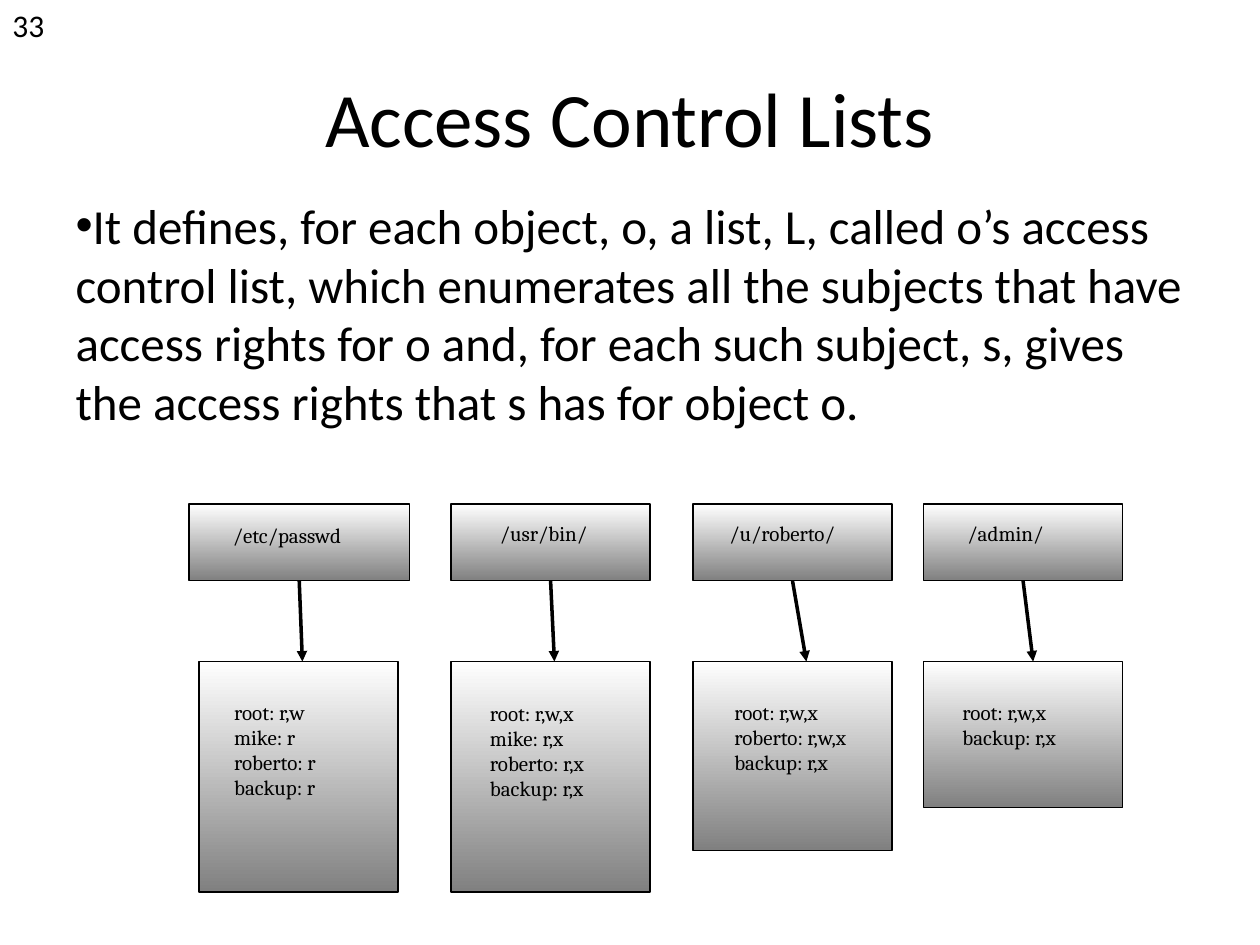
from lxml.etree import SubElement
from pptx import Presentation
from pptx.dml.color import RGBColor
from pptx.enum.shapes import MSO_CONNECTOR as Connector, MSO_SHAPE as Shape
from pptx.enum.text import MSO_ANCHOR as Anchor, PP_ALIGN as Align
from pptx.oxml.ns import qn
from pptx.util import Inches, Pt


def color(value):
    return RGBColor.from_string(value)


def write(frame, text, size, font):
    frame.text = text
    for paragraph in frame.paragraphs:
        for run in paragraph.runs:
            run.font.size = Pt(size)
            run.font.name = font
            run.font.color.rgb = color("000000")


deck = Presentation()
deck.slide_width, deck.slide_height = Inches(10), Inches(7.5)
slide = deck.slides.add_slide(deck.slide_layouts[1])
shapes = slide.shapes

title = shapes.title
title.left, title.top = Inches(0.5), Inches(0.3)
title.width, title.height = Inches(9), Inches(1.25)
write(title.text_frame, "Access Control Lists", 44, "Calibri")
title.text_frame.vertical_anchor = Anchor.MIDDLE
title.text_frame.paragraphs[0].alignment = Align.CENTER

definition = slide.placeholders[1]
definition.left, definition.top = Inches(0.5), Inches(1.5)
definition.width, definition.height = Inches(9), Inches(4.95)
write(
    definition.text_frame,
    "It defines, for each object, o, a list, L, called o’s access control list, "
    "which enumerates all the subjects that have access rights for o and, for each "
    "such subject, s, gives the access rights that s has for object o.",
    28, "Calibri",
)
bullet_format = definition.text_frame.paragraphs[0]._p.get_or_add_pPr()
bullet_format.set("marL", "0")
bullet_format.set("indent", "0")
SubElement(bullet_format, qn("a:buChar")).set("char", "•")

page_number = shapes.add_textbox(Inches(0), Inches(0), Inches(0.6), Inches(0.4))
write(page_number.text_frame, "33", 18, "Calibri")

object_top, object_height, rights_top = 4, 0.61, 5.25
object_bottom = object_top + object_height
rights_width = 1.58

access_lists = [
    dict(object="/etc/passwd", left=1.5, width=1.75, label=(1.75, 4.1, 1.17),
         rights=["root: r,w", "mike: r", "roberto: r", "backup: r"],
         rights_left=1.58, rights_height=1.83, entries=(1.76, 5.5, 0.89), arrow_end=2.4),
    dict(object="/usr/bin/", left=3.58, width=1.58, label=(3.87, 4.08, 0.97),
         rights=["root: r,w,x", "mike: r,x", "roberto: r,x", "backup: r,x"],
         rights_left=3.58, rights_height=1.83, entries=(3.79, 5.51, 1.01), arrow_end=4.4),
    dict(object="/u/roberto/", left=5.5, width=1.58, label=(5.69, 4.08, 1.15),
         rights=["root: r,w,x", "roberto: r,w,x", "backup: r,x"],
         rights_left=5.5, rights_height=1.5, entries=(5.73, 5.5, 1.17), arrow_end=6.4),
    dict(object="/admin/", left=7.33, width=1.58, label=(7.58, 4.08, 0.88),
         rights=["root: r,w,x", "backup: r,x"],
         rights_left=7.33, rights_height=1.16, entries=(7.54, 5.5, 1.01), arrow_end=8.2),
]

for acl in access_lists:
    for bounds in [
        (acl["left"], object_top, acl["width"], object_height),
        (acl["rights_left"], rights_top, rights_width, acl["rights_height"]),
    ]:
        box = shapes.add_shape(Shape.RECTANGLE, *map(Inches, bounds))
        box.shadow.inherit = False
        box.fill.gradient()
        box.fill.gradient_angle = 90
        for stop, shade in zip(box.fill.gradient_stops, ["808080", "FFFFFF"]):
            stop.color.rgb = color(shade)
        box.line.color.rgb = color("000000")
        box.line.width = Pt(0.75)

    for place, lines in [(acl["label"], [acl["object"]]), (acl["entries"], acl["rights"])]:
        caption = shapes.add_textbox(*map(Inches, (*place, 0.1 + 0.2 * len(lines))))
        caption.text_frame.word_wrap = False
        write(caption.text_frame, "\n".join(lines), 12, "Cambria")

    arrow = shapes.add_connector(
        Connector.STRAIGHT,
        Inches(acl["left"] + acl["width"] / 2), Inches(object_bottom),
        Inches(acl["arrow_end"]), Inches(rights_top),
    )
    arrow.line.color.rgb = color("000000")
    arrow.line.width = Pt(2)
    SubElement(arrow.line._get_or_add_ln(), qn("a:tailEnd")).set("type", "triangle")
    SubElement(arrow._element.spPr, qn("a:effectLst"))

deck.save("out.pptx")
